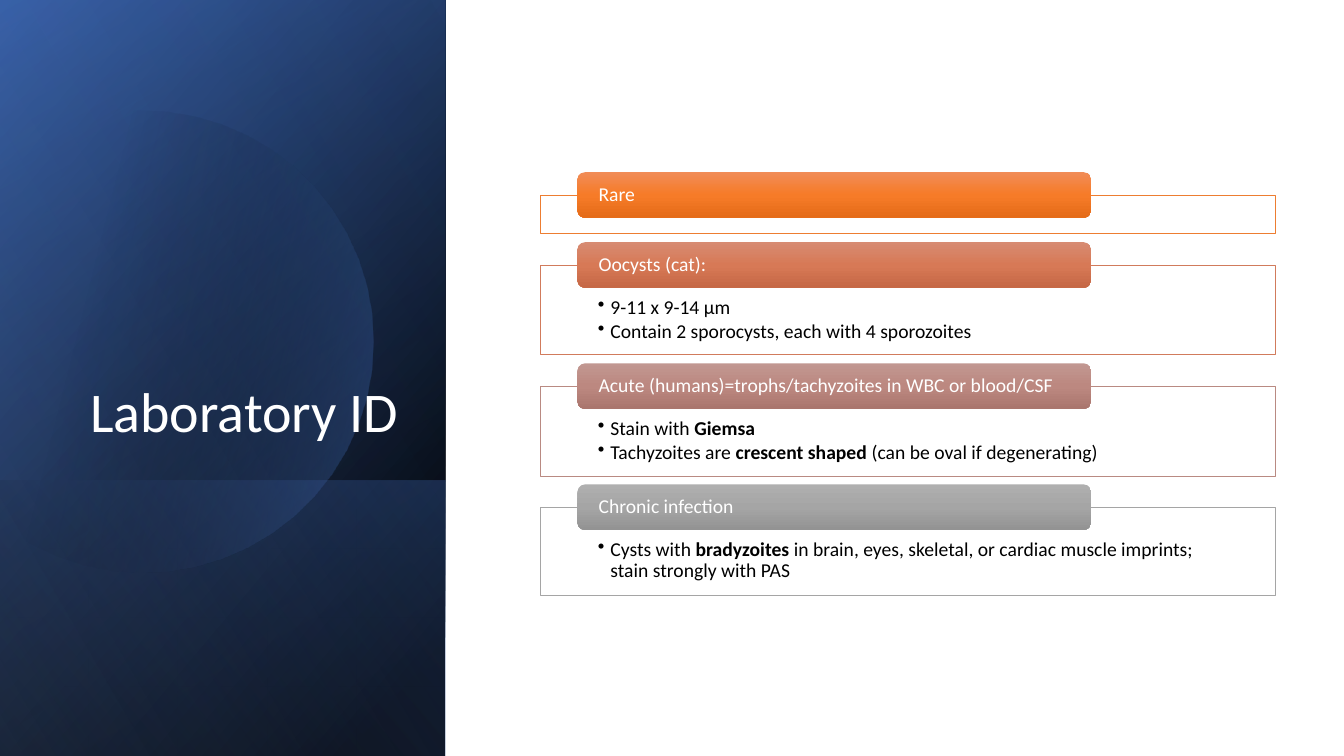
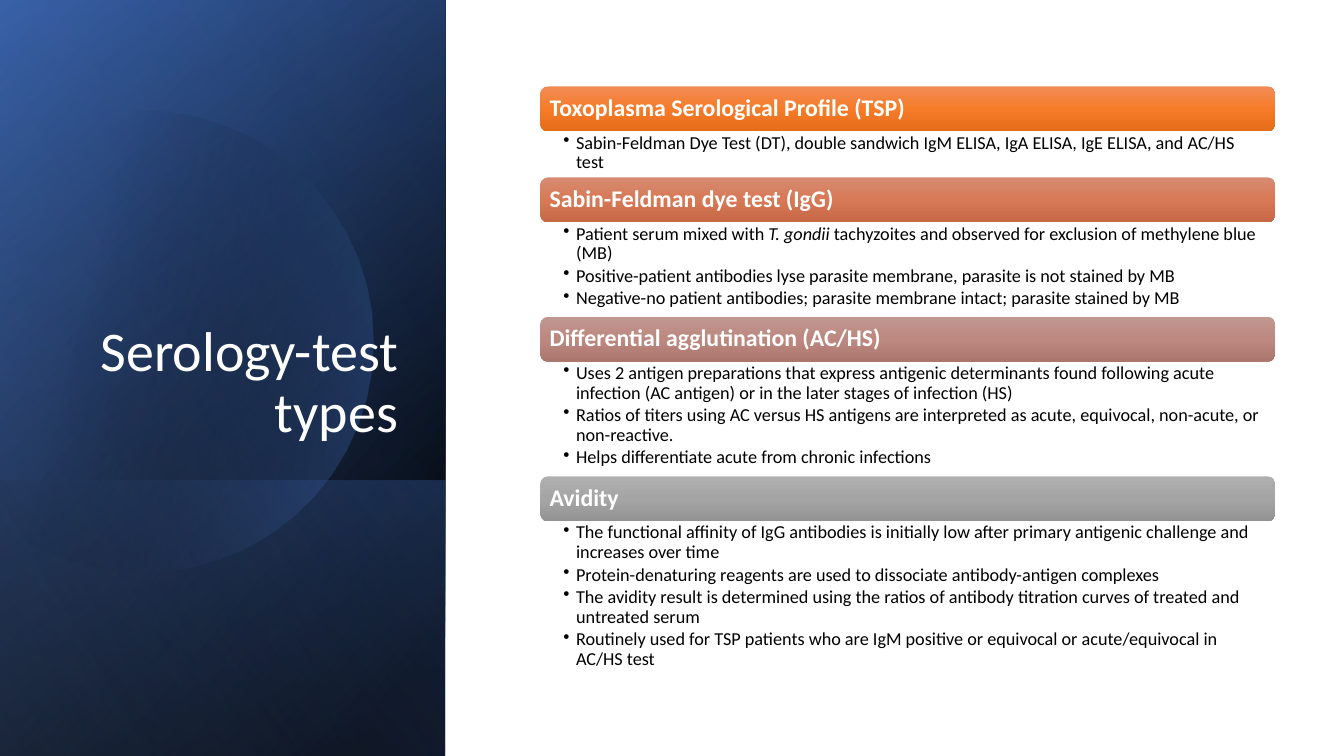
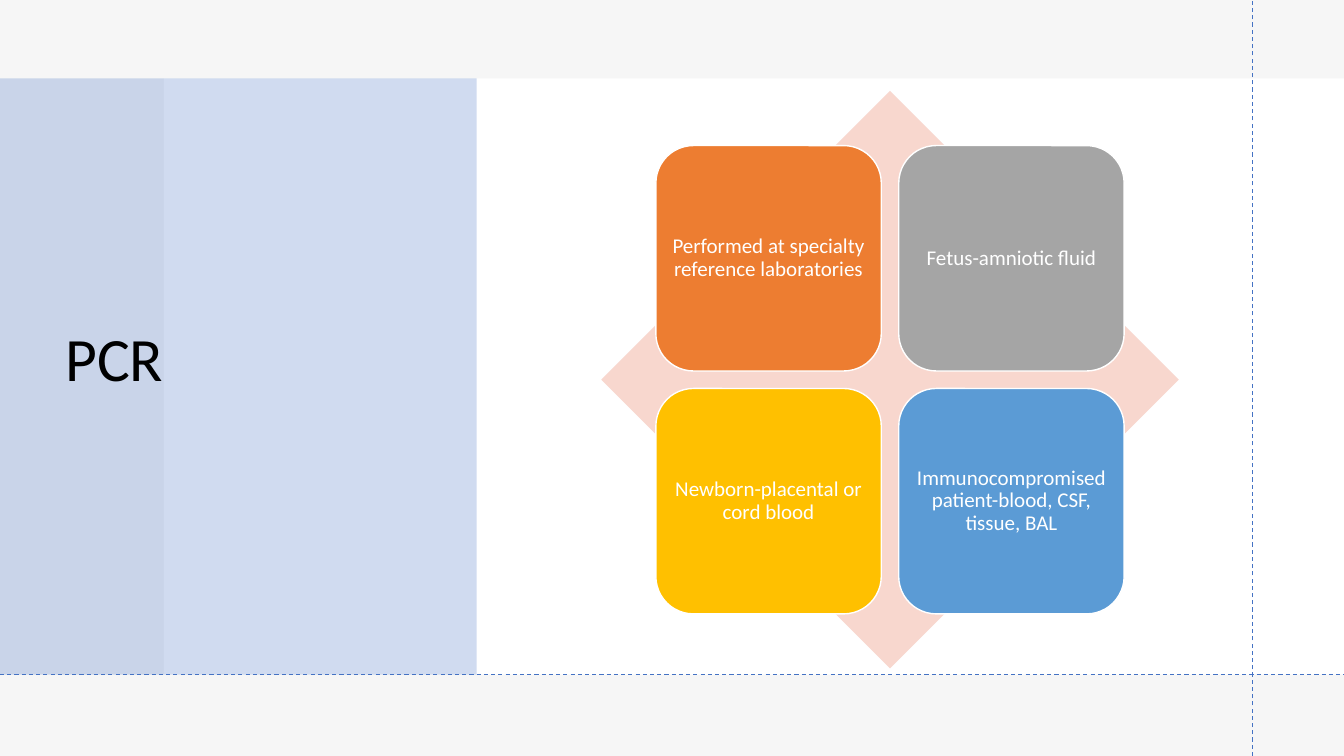
from math import cos, radians, sin

from pptx import Presentation
from pptx.dml.color import RGBColor
from pptx.enum.dml import MSO_LINE
from pptx.enum.shapes import MSO_CONNECTOR, MSO_SHAPE
from pptx.enum.text import MSO_ANCHOR, MSO_AUTO_SIZE, PP_ALIGN
from pptx.oxml import parse_xml
from pptx.oxml.ns import nsdecls, qn
from pptx.util import Pt

FONT = "Calibri"
C = {
    "white": "FFFFFF", "black": "000000", "navy": "2F5597", "blue": "4472C4",
    "pale_blue": "8FAADC", "sky": "5B9BD5", "orange": "ED7D31", "clay": "D17B5C",
    "rose": "B98A82", "gray": "A5A5A5", "gold": "FFC000", "peach": "F8D7CE",
    "light_gray": "F6F6F6",
}
HEADER_GRADIENTS = [
    ("F18C57", "F67B28", "E56C19"),
    ("D78B72", "D77956", "C66846"),
    ("C19791", "BC8880", "AA766E"),
    ("AFAFAF", "A5A5A5", "939393"),
]


def paint(sp, stops, angle=0):
    """Fill with (position, colour, opacity) stops: one is solid, more are a gradient.

    The shape also loses its outline and shadow.
    """
    colours = [f'<a:srgbClr val="{colour}"><a:alpha val="{opacity * 1000}"/></a:srgbClr>'
               for _, colour, opacity in stops]
    if len(stops) == 1:
        xml = f'<a:solidFill {nsdecls("a")}>{colours[0]}</a:solidFill>'
    else:
        gs = "".join(f'<a:gs pos="{stop[0] * 1000}">{colour}</a:gs>'
                     for stop, colour in zip(stops, colours))
        xml = (f'<a:gradFill {nsdecls("a")} rotWithShape="1"><a:gsLst>{gs}</a:gsLst>'
               f'<a:lin ang="{angle * 60000}" scaled="0"/></a:gradFill>')
    sp.fill.background()
    spPr = sp._element.spPr
    spPr.replace(spPr.find(qn("a:noFill")), parse_xml(xml))
    sp.line.fill.background()
    sp.shadow.inherit = False


def write(sp, paragraphs, size, color="white", bold=False, align=PP_ALIGN.LEFT,
          anchor=MSO_ANCHOR.MIDDLE, insets=(7.2, 3.6, 7.2, 3.6), bullet=False,
          after=0, emphasis="bold"):
    """Set the text of a shape; words between asterisks get the emphasis."""
    tf = sp.text_frame
    tf.word_wrap = True
    tf.auto_size = MSO_AUTO_SIZE.NONE
    tf.vertical_anchor = anchor
    tf.margin_left, tf.margin_top, tf.margin_right, tf.margin_bottom = map(Pt, insets)
    for i, text in enumerate(paragraphs):
        p = tf.add_paragraph() if i else tf.paragraphs[0]
        if bullet:
            pPr = p._p.get_or_add_pPr()
            pPr.set("marL", str(Pt(9)))
            pPr.set("indent", str(-Pt(9)))
            pPr.append(parse_xml(f'<a:buChar {nsdecls("a")} char="•"/>'))
        p.alignment = align
        p.line_spacing = 0.9
        p.space_after = Pt(after)
        for j, part in enumerate(text.split("*")):
            r = p.add_run()
            r.text = part
            r.font.name = FONT
            r.font.size = Pt(size)
            r.font.color.rgb = RGBColor.from_string(C[color])
            r.font.bold = bold
            if j % 2:
                setattr(r.font, emphasis, True)


prs = Presentation()
prs.slide_width, prs.slide_height = Pt(960), Pt(540)
layout = prs.slide_layouts[5]

# Slides 1 and 2: shaded side panel with the title
PANEL_W = 318
full_layers = [
    (540, [(8, C["black"], 100), (100, C["navy"], 100)], 50),
    (540, [(0, C["black"], 0), (99, C["blue"], 46)], 30),
    (197, [(2, C["blue"], 29), (100, C["black"], 30)], 130),
]
top_layer = (540, [(0, C["black"], 0), (99, C["pale_blue"], 11)], 120)
panel_slides = []
for title_text in ("Laboratory ID", "Serology-test types"):
    s = prs.slides.add_slide(layout)
    panel_slides.append(s)
    for height, stops, angle in full_layers + [None, top_layer][1:]:
        if stops is top_layer[1]:
            rim = [(Pt(102 + 165 * cos(radians(a))), Pt(244 + 165 * sin(radians(a))))
                   for a in range(-133, 134, 7)]
            builder = s.shapes.build_freeform(*rim[0], scale=1.0)
            builder.add_line_segments(rim[1:], close=True)
            disc = builder.convert_to_shape()
            paint(disc, [(29, C["black"], 0), (100, C["blue"], 43)], 14)
        layer = s.shapes.add_shape(
            MSO_SHAPE.RECTANGLE, Pt((PANEL_W - height) / 2),
            Pt(540 - (height + PANEL_W) / 2), Pt(height), Pt(PANEL_W))
        layer.rotation = 90
        layer._element.spPr.find(qn("a:xfrm")).set("flipH", "1")
        paint(layer, stops, angle)
    title = s.shapes.title
    title.left, title.top, title.width, title.height = Pt(46), Pt(132.5), Pt(245.5), Pt(188.5)
    write(title, [title_text], 40, align=PP_ALIGN.RIGHT, anchor=MSO_ANCHOR.BOTTOM)
    s.shapes._spTree.append(title._element)

# Slide 1: framed cards with overlapping headers
s = panel_slides[0]
cards = [
    ("Rare", "orange", 27.5, []),
    ("Oocysts (cat):", "clay", 64,
     ["9-11 x 9-14 µm", "Contain 2 sporocysts, each with 4 sporozoites"]),
    ("Acute (humans)=trophs/tachyzoites in WBC or blood/CSF", "rose", 64,
     ["Stain with *Giemsa*",
      "Tachyzoites are *crescent shaped *(can be oval if degenerating)"]),
    ("Chronic infection", "gray", 62.5,
     ["Cysts with *bradyzoites* in brain, eyes, skeletal, or cardiac muscle imprints; "
      "stain strongly with PAS"]),
]
top = 139.5
for (heading, color, height, bullets), shades in zip(cards, HEADER_GRADIENTS):
    frame = s.shapes.add_shape(MSO_SHAPE.RECTANGLE, Pt(386), Pt(top), Pt(525), Pt(height))
    paint(frame, [(0, C["white"], 90)])
    frame.line.color.rgb = RGBColor.from_string(C[color])
    frame.line.width = Pt(0.5)
    if bullets:
        write(frame, bullets, 14, "black", anchor=MSO_ANCHOR.TOP,
              insets=(41, 23, 41, 8), bullet=True, after=2)
    header = s.shapes.add_shape(MSO_SHAPE.ROUNDED_RECTANGLE,
                                Pt(412.5), Pt(top - 16.5), Pt(367), Pt(32.5))
    paint(header, [(i * 50, shade, 100) for i, shade in enumerate(shades)], 90)
    write(header, [heading], 14, insets=(13.5, 0, 13.5, 0))
    top += height + 22.5

# Slide 2: full-width headers, each followed by its bullets
s = panel_slides[1]
sections = [
    ("Toxoplasma Serological Profile (TSP)", 33,
     ["Sabin-Feldman Dye Test (DT), double sandwich IgM ELISA, IgA ELISA, IgE ELISA, "
      "and AC/HS test"]),
    ("Sabin-Feldman dye test (IgG)", 67.5,
     ["Patient serum mixed with *T. gondii *tachyzoites and observed for exclusion of "
      "methylene blue (MB)",
      "Positive-patient antibodies lyse parasite membrane, parasite is not stained by MB",
      "Negative-no patient antibodies; parasite membrane intact; parasite stained by MB"]),
    ("Differential agglutination (AC/HS)", 82,
     ["Uses 2 antigen preparations that express antigenic determinants found following "
      "acute infection (AC antigen) or in the later stages of infection (HS)",
      "Ratios of titers using AC versus HS antigens are interpreted as acute, equivocal, "
      "non-acute, or non-reactive.",
      "Helps differentiate acute from chronic infections"]),
    ("Avidity", 113.5,
     ["The functional affinity of IgG antibodies is initially low after primary antigenic "
      "challenge and increases over time",
      "Protein-denaturing reagents are used to dissociate antibody-antigen complexes",
      "The avidity result is determined using the ratios of antibody titration curves of "
      "treated and untreated serum",
      "Routinely used for TSP patients who are IgM positive or equivocal or "
      "acute/equivocal in AC/HS test"]),
]
top = 61.75
for (heading, height, bullets), shades in zip(sections, HEADER_GRADIENTS):
    header = s.shapes.add_shape(MSO_SHAPE.ROUNDED_RECTANGLE,
                                Pt(386), Pt(top), Pt(525), Pt(32))
    paint(header, [(i * 50, shade, 100) for i, shade in enumerate(shades)], 90)
    write(header, [heading], 17, bold=True, insets=(5, 5, 5, 5))
    body = s.shapes.add_textbox(Pt(386), Pt(top + 32), Pt(525), Pt(height))
    write(body, bullets, 13, "black", anchor=MSO_ANCHOR.TOP, insets=(16.5, 1.5, 9.5, 1.5),
          bullet=True, after=2, emphasis="italic")
    top += 32 + height

# Slide 3: four tiles on a diamond
s = prs.slides.add_slide(layout)
s.background.fill.solid()
s.background.fill.fore_color.rgb = RGBColor.from_string(C["light_gray"])
for left, top, width, height, color, opacity in (
        (117, 56, 843, 426, "white", 100), (0, 56, 340.5, 426, "blue", 25)):
    band = s.shapes.add_shape(MSO_SHAPE.RECTANGLE, Pt(left), Pt(top), Pt(width), Pt(height))
    paint(band, [(0, C[color], opacity)])

title = s.shapes.title
title.left, title.top, title.width, title.height = Pt(39.5), Pt(53.5), Pt(284.5), Pt(409.5)
write(title, ["PCR"], 44, "black")
s.shapes._spTree.append(title._element)

for ends in ((894.5, 540, 894.5, 0), (0, 482, 960, 482)):
    guide = s.shapes.add_connector(MSO_CONNECTOR.STRAIGHT, *map(Pt, ends))
    guide.line.color.rgb = RGBColor.from_string(C["blue"])
    guide.line.width = Pt(0.75)
    guide.line.dash_style = MSO_LINE.DASH
    guide._element.spPr.append(parse_xml(f'<a:effectLst {nsdecls("a")}/>'))

diamond = s.shapes.add_shape(MSO_SHAPE.DIAMOND, Pt(429.5), Pt(65), Pt(412.5), Pt(412.5))
paint(diamond, [(0, C["peach"], 100)])
tiles = [
    ("Performed at specialty reference laboratories", "orange"),
    ("Fetus-amniotic fluid", "gray"),
    ("Newborn-placental or cord blood", "gold"),
    ("Immunocompromised patient-blood, CSF, tissue, BAL", "sky"),
]
for i, (text, color) in enumerate(tiles):
    tile = s.shapes.add_shape(MSO_SHAPE.ROUNDED_RECTANGLE, Pt(468.5 + i % 2 * 173.5),
                              Pt(104 + i // 2 * 173.5), Pt(161), Pt(161))
    paint(tile, [(0, C[color], 100)])
    tile.line.color.rgb = RGBColor.from_string(C["white"])
    tile.line.width = Pt(1)
    write(tile, [text], 15, align=PP_ALIGN.CENTER, insets=(4, 4, 4, 4))

prs.save("out.pptx")
